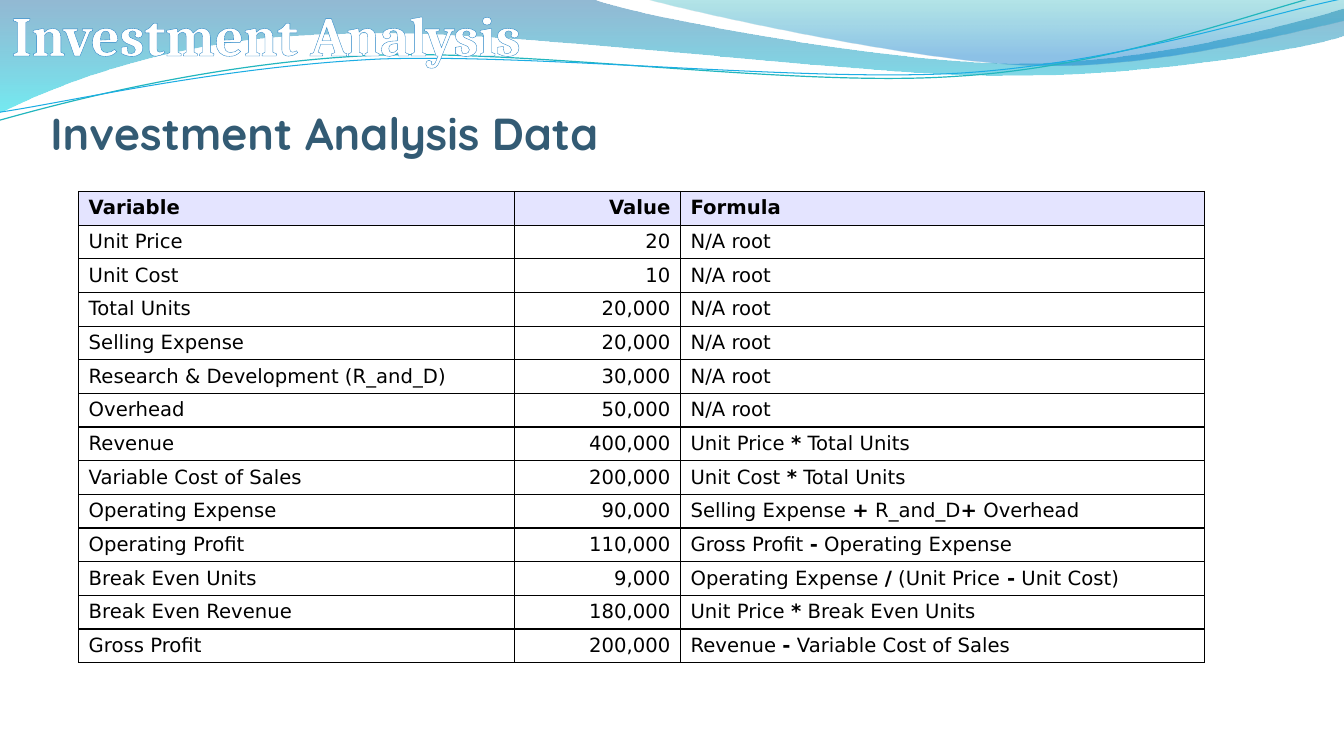
from lxml import etree
from pptx import Presentation
from pptx.dml.color import RGBColor
from pptx.enum.text import MSO_ANCHOR, PP_ALIGN
from pptx.oxml import parse_xml
from pptx.oxml.ns import nsdecls, qn
from pptx.util import Inches, Pt

LEFT, CENTER, RIGHT = PP_ALIGN.LEFT, PP_ALIGN.CENTER, PP_ALIGN.RIGHT
TOP = MSO_ANCHOR.TOP
WHITE = RGBColor(0xFF, 0xFF, 0xFF)
BLACK = RGBColor(0, 0, 0)
TITLE_BLUE = RGBColor(0x33, 0x5B, 0x74)
OUTLINE_BLUE = RGBColor(0x26, 0x83, 0xC6)
HEADER_LILAC = RGBColor(0xE4, 0xE4, 0xFF)
DEEP_BLUE = RGBColor(0x10, 0x63, 0x9E)
CYAN = RGBColor(0x00, 0xDB, 0xE7)
TEAL = RGBColor(0x09, 0xAA, 0xB3)
SKY_BLUE = RGBColor(0x05, 0x78, 0xCB)
LINE_TEAL = RGBColor(0x22, 0xB6, 0xBE)
LINE_BLUE = RGBColor(0x1C, 0xAD, 0xE4)

prs = Presentation()
prs.slide_width, prs.slide_height = Inches(13.33), Inches(7.5)
slide = prs.slides.add_slide(prs.slide_layouts[6])


def add_wave(start, segments, closed):
    points = [(Inches(x), Inches(y)) for segment in segments for x, y in segment]
    builder = slide.shapes.build_freeform(Inches(start[0]), Inches(start[1]))
    builder.add_line_segments(points, close=closed)
    wave = builder.convert_to_shape()
    wave.shadow.inherit = False
    steps = iter(list(wave._element.spPr.iter(qn("a:lnTo"))))
    for segment in segments:
        first, *others = [next(steps) for _ in segment]
        if others:
            first.tag = qn("a:cubicBezTo")
        for other in others:
            first.append(other[0])
            other.getparent().remove(other)
    return wave


def style_run(run, font_name, size, color, bold):
    run.font.name = font_name
    run.font.size = Pt(size)
    run.font.color.rgb = color
    run.font.bold = bold


bands = [
    ((0, 0), [
        [(5.87, -0.01)],
        [(6.34, 0.17), (8.84, 0.63), (10.11, 0.63)],
        [(11.37, 0.63), (12.77, 0.26), (13.33, 0.09)],
        [(13.34, 0.36)],
        [(13.11, 0.44), (11.59, 0.76), (9.94, 0.75)],
        [(8.29, 0.75), (5.09, 0.28), (3.43, 0.34)],
        [(1.72, 0.36), (0.61, 0.83), (-0.02, 1.13)],
        [(0, 0)],
    ], [(0, DEEP_BLUE, 45), (1, CYAN, 55)]),
    ((6.38, -0.01), [
        [(6.79, 0.11), (9.09, 0.62), (10.25, 0.65)],
        [(11.4, 0.69), (12.82, 0.32), (13.33, 0.21)],
        [(13.33, 0)],
        [(6.38, -0.01)],
    ], [(0, TEAL, 30), (0.8, SKY_BLUE, 45)]),
]
for start, segments, stops in bands:
    band = add_wave(start, segments, True)
    band.line.fill.background()
    band.fill.gradient()
    band.fill.gradient_angle = 270
    for stop, (position, color, opacity) in zip(band.fill.gradient_stops, stops):
        stop.position = position
        stop.color.rgb = color
    for color_element, (_, _, opacity) in zip(band._element.spPr.iter(qn("a:srgbClr")), stops):
        etree.SubElement(color_element, qn("a:alpha")).set("val", str(opacity * 1000))

strands = [
    ((-0.03, 0.88), [
        [(0.62, 0.73), (2.1, 0.41), (3.69, 0.41)],
        [(5.28, 0.42), (7.87, 0.93), (9.48, 0.89)],
        [(11.09, 0.87), (12.53, 0.36), (13.33, 0.22)],
    ], LINE_TEAL, 0.85),
    ((-0.03, 0.8), [
        [(0.61, 0.74), (2.18, 0.45), (3.77, 0.45)],
        [(5.37, 0.47), (7.95, 0.88), (9.54, 0.86)],
        [(11.13, 0.83), (12.56, 0.42), (13.35, 0.3)],
    ], LINE_BLUE, 0.75),
]
for start, segments, color, width in strands:
    strand = add_wave(start, segments, False)
    strand.rotation = 357.3
    strand.fill.background()
    strand.line.color.rgb = color
    strand.line.width = Pt(width)

headings = [
    ("Investment Analysis", (0, 0, 5.28, 0.67), 0, False, CENTER, "Cambria", 40, WHITE),
    ("Investment Analysis Data", (0.5, 1, 11.17, 0.9), 0.05, True, LEFT, "Quicksand", 32, TITLE_BLUE),
]
heading_runs = []
for wording, place, top_inset, wraps, alignment, font_name, size, color in headings:
    frame = slide.shapes.add_textbox(*map(Inches, place)).text_frame
    frame.margin_left = frame.margin_right = frame.margin_bottom = 0
    frame.margin_top = Inches(top_inset)
    frame.word_wrap = wraps
    frame.vertical_anchor = TOP
    frame.text = wording
    frame.paragraphs[0].alignment = alignment
    run = frame.paragraphs[0].runs[0]
    style_run(run, font_name, size, color, True)
    heading_runs.append(run)

heading_runs[0]._r.get_or_add_rPr().insert(0, parse_xml(
    f'<a:ln {nsdecls("a")} w="{Pt(0.52)}"><a:solidFill>'
    f'<a:srgbClr val="{OUTLINE_BLUE}"/></a:solidFill></a:ln>'))

rows = [
    ("Variable", "Value", "Formula"),
    ("Unit Price", "20", "N/A root"),
    ("Unit Cost", "10", "N/A root"),
    ("Total Units", "20,000", "N/A root"),
    ("Selling Expense", "20,000", "N/A root"),
    ("Research & Development (R_and_D)", "30,000", "N/A root"),
    ("Overhead", "50,000", "N/A root"),
    ("Revenue", "400,000", "Unit Price |*| Total Units"),
    ("Variable Cost of Sales", "200,000", "Unit Cost |*| Total Units"),
    ("Operating Expense", "90,000", "Selling Expense |+| R_and_D|+| Overhead"),
    ("Operating Profit", "110,000", "Gross Profit |-| Operating Expense"),
    ("Break Even Units", "9,000", "Operating Expense |/| (Unit Price| -| Unit Cost)"),
    ("Break Even Revenue", "180,000", "Unit Price |*| Break Even Units"),
    ("Gross Profit", "200,000", "Revenue |-| Variable Cost of Sales"),
]
column_widths = (4.32, 1.65, 5.2)
minimum_row_height = Inches(0.13)
table_height = Inches(4.67)
table_frame = slide.shapes.add_table(
    len(rows), len(column_widths), Inches(0.78), Inches(1.9),
    Inches(sum(column_widths)), table_height)
table = table_frame.table
table.horz_banding = False
for column, width in zip(table.columns, column_widths):
    column.width = Inches(width)

for row_index, row in enumerate(rows):
    table.rows[row_index].height = minimum_row_height
    is_header = row_index == 0
    for column_index, wording in enumerate(row):
        cell = table.cell(row_index, column_index)
        if is_header:
            cell.fill.solid()
            cell.fill.fore_color.rgb = HEADER_LILAC
        else:
            cell.fill.background()
        paragraph = cell.text_frame.paragraphs[0]
        paragraph.alignment = RIGHT if column_index == 1 else LEFT
        for part_index, part in enumerate(wording.split("|")):
            run = paragraph.add_run()
            run.text = part
            style_run(run, "DejaVu Sans", 14, BLACK, is_header or part_index % 2 == 1)
        for edge_index, edge in enumerate(("lnL", "lnR", "lnT", "lnB")):
            cell._tc.get_or_add_tcPr().insert(edge_index, parse_xml(
                f'<a:{edge} {nsdecls("a")} w="{Pt(1)}"><a:solidFill>'
                f'<a:srgbClr val="{BLACK}"/></a:solidFill></a:{edge}>'))
table_frame.height = table_height

prs.save("out.pptx")
